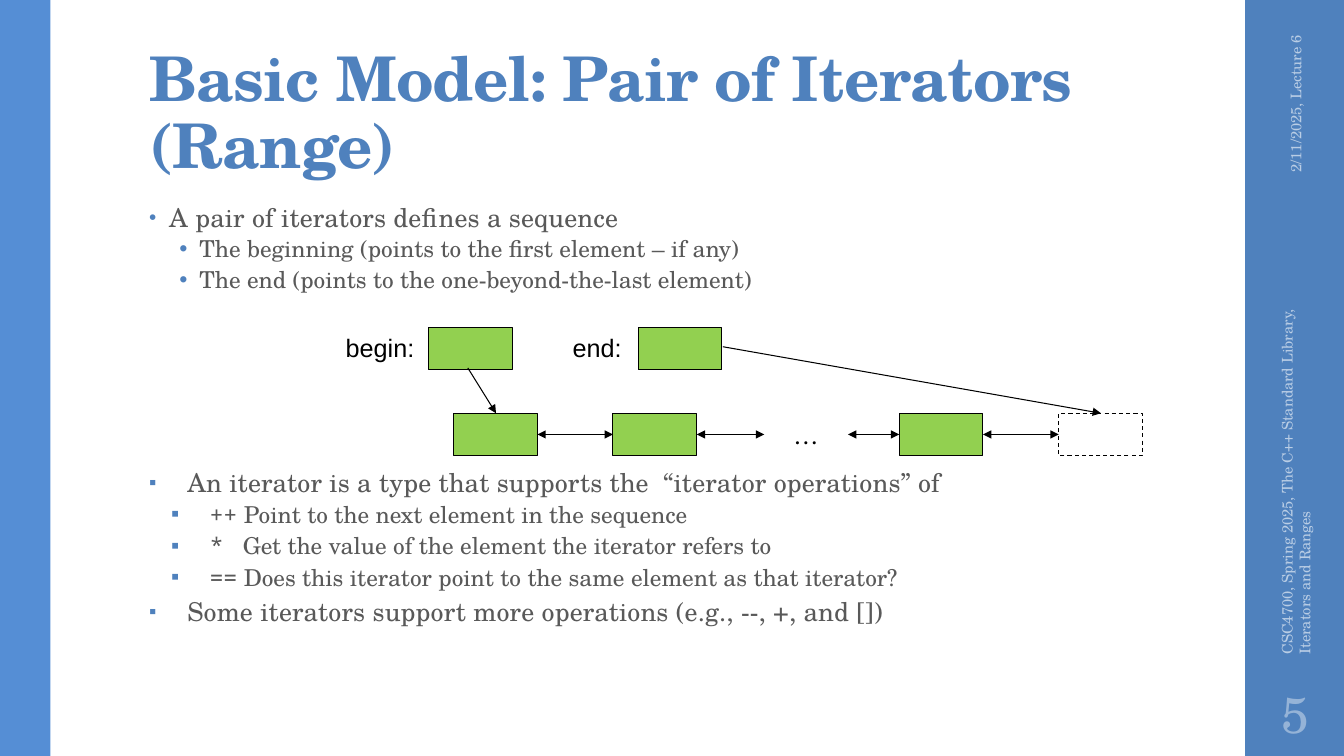
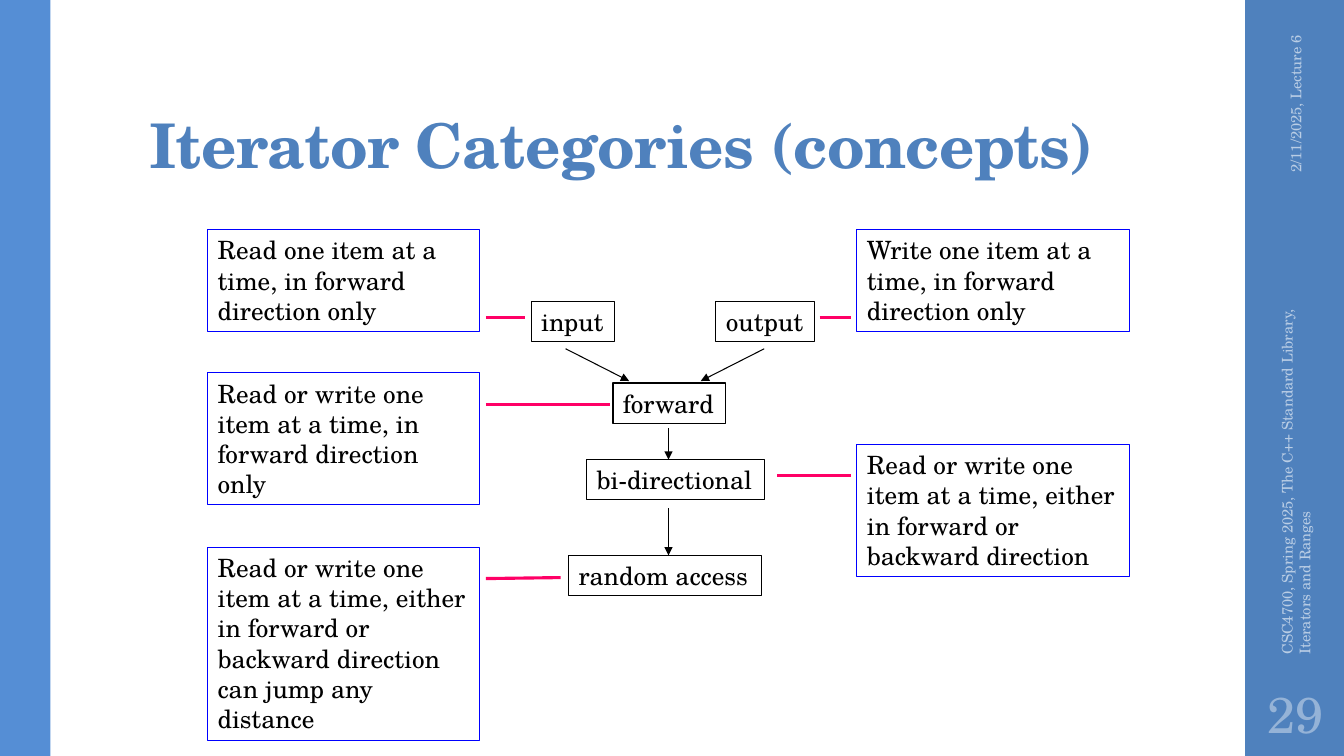
"""Two lecture slides on iterators: the basic model and the categories."""
import pptx
import pptx.util
import pptx.dml.color
import pptx.enum.dml
import pptx.enum.shapes
import pptx.enum.text
import pptx.oxml.ns
import lxml.etree

Inches = pptx.util.Inches
Pt = pptx.util.Pt
RGB = pptx.dml.color.RGBColor.from_string
ALIGN = pptx.enum.text.PP_ALIGN
ANCHOR = pptx.enum.text.MSO_ANCHOR
RECT = pptx.enum.shapes.MSO_SHAPE.RECTANGLE
qn = pptx.oxml.ns.qn

SERIF, MONO, SANS = "TeX Gyre Schola", "Noto Sans Mono", "Arial"
COLORS = {
    "accent": "4F81BD", "band": "558ED5", "body": "595959", "footer": "B9CDE5",
    "number": "95B3D7", "cell": "92D050", "black": "000000", "white": "FFFFFF",
    "note": "0000FF", "link": "FF0066",
}


def add_text(s, at, text, size=18, color="black", font=SERIF, align=ALIGN.LEFT,
             anchor=ANCHOR.TOP, wrap=True, border=None):
    """Add a one-paragraph text box, with a border if a colour is given."""
    sp = s.shapes.add_textbox(*[Inches(v) for v in at])
    tf = sp.text_frame
    tf.word_wrap = wrap
    tf.vertical_anchor = anchor
    p = tf.paragraphs[0]
    p.alignment = align
    r = p.add_run()
    r.text = text
    r.font.size = Pt(size)
    r.font.name = font
    r.font.color.rgb = RGB(COLORS[color])
    if border:
        sp.line.color.rgb = RGB(COLORS[border])
        sp.line.width = Pt(0.75)
    return sp


def add_line(s, ends, color="black", width=0.75, arrows=("tailEnd",)):
    """Add a straight connector with triangles at the named ends."""
    cx = s.shapes.add_connector(pptx.enum.shapes.MSO_CONNECTOR.STRAIGHT,
                                *[Inches(v) for v in ends])
    cx.line.color.rgb = RGB(COLORS[color])
    cx.line.width = Pt(width)
    ln = cx.line._get_or_add_ln()
    for tag in arrows:
        lxml.etree.SubElement(ln, qn("a:" + tag), type="triangle")
    lxml.etree.SubElement(cx._element.spPr, qn("a:effectLst"))


prs = pptx.Presentation()
prs.slide_width = Inches(13.33)
prs.slide_height = Inches(7.5)

slides = []
for title, number in [("Basic Model: Pair of Iterators (Range)", "5"),
                      ("Iterator Categories (concepts)", "29")]:
    s = prs.slides.add_slide(prs.slide_layouts[5])
    slides.append(s)
    for left, width, color in [(12.35, 1, "accent"), (0, 0.5, "band")]:
        sp = s.shapes.add_shape(RECT, Inches(left), 0, Inches(width), prs.slide_height)
        sp.shadow.inherit = False
        sp.fill.solid()
        sp.fill.fore_color.rgb = RGB(COLORS[color])
        sp.line.fill.background()

    sp = s.shapes.title
    sp.left, sp.top = Inches(1.38), Inches(0.32)
    sp.width, sp.height = Inches(10.6), Inches(1.53)
    tf = sp.text_frame
    tf.word_wrap = True
    tf.auto_size = pptx.enum.text.MSO_AUTO_SIZE.NONE
    tf.vertical_anchor = ANCHOR.BOTTOM
    tf.margin_top = Inches(0.03)
    p = tf.paragraphs[0]
    p.alignment = ALIGN.LEFT
    p.line_spacing = 0.9
    r = p.add_run()
    r.text = title
    r.font.size = Pt(44)
    r.font.bold = True
    r.font.name = SERIF
    r.font.color.rgb = RGB(COLORS["accent"])
    r._r.get_or_add_rPr().set("spc", "-50")

    for at, text, align in [
        ((11.81, 1.09, 2.08, 0.4), "2/11/2025, Lecture 6", ALIGN.RIGHT),
        ((10.89, 4.43, 3.92, 0.4),
         "CSC4700, Spring 2025, The C++ Standard Library, Iterators and Ranges", ALIGN.LEFT),
    ]:
        sp = add_text(s, at, text, 10.5, "footer", align=align, anchor=ANCHOR.MIDDLE)
        sp.rotation = 270
    sp = add_text(s, (12.35, 6.75, 1, 0.65), number, 36, "number",
                  align=ALIGN.CENTER, anchor=ANCHOR.MIDDLE)
    sp.text_frame.margin_left = sp.text_frame.margin_right = Inches(0.05)

model, categories = slides

LEVELS = [
    {"size": 18.5, "spacing": 0.85, "after": 2, "bullet": "80000", "spc": "10"},
    {"size": 16.6, "spacing": 0.8, "after": 3, "bullet": "100000", "spc": "0"},
]
LISTS = [
    {"top": 2, "height": 1.1, "bullet": "•", "margins": (0.2, 0.5), "hang": 0.2,
     "before": (14, 3), "items": [
         (0, "", "A pair of iterators defines a sequence"),
         (1, "", "The beginning (points to the first element – if any)"),
         (1, "", "The end (points to the one-beyond-the-last element)")]},
    {"top": 4.63, "height": 1.75, "bullet": "▪", "margins": (0.38, 0.6), "hang": 0.38,
     "before": (4, 3.4), "items": [
         (0, "", "An iterator is a type that supports the  “iterator operations” of"),
         (1, "++", " Point to the next element in the sequence"),
         (1, "*", " Get the value of the element the iterator refers to"),
         (1, "==", " Does this iterator point to the same element as that iterator?"),
         (0, "", "Some iterators support more operations (e.g., --, +, and [])")]},
]
for block in LISTS:
    sp = model.shapes.add_textbox(Inches(1.38), Inches(block["top"]),
                                  Inches(9.4), Inches(block["height"]))
    tf = sp.text_frame
    tf.word_wrap = True
    for i, (level, code, text) in enumerate(block["items"]):
        style = LEVELS[level]
        p = tf.add_paragraph() if i else tf.paragraphs[0]
        p.level = level
        p.line_spacing = style["spacing"]
        p.space_before = Pt(block["before"][level])
        p.space_after = Pt(style["after"])
        pPr = p._p.get_or_add_pPr()
        pPr.set("marL", str(Inches(block["margins"][level])))
        pPr.set("indent", str(-Inches(block["hang"])))
        clr = lxml.etree.SubElement(pPr, qn("a:buClr"))
        lxml.etree.SubElement(clr, qn("a:srgbClr"), val=COLORS["accent"])
        lxml.etree.SubElement(pPr, qn("a:buSzPct"), val=style["bullet"])
        lxml.etree.SubElement(pPr, qn("a:buFont"), typeface=SANS)
        lxml.etree.SubElement(pPr, qn("a:buChar"), char=block["bullet"])
        for words, font in [(code, MONO), (text, SERIF)]:
            if words:
                r = p.add_run()
                r.text = words
                r.font.size = Pt(style["size"])
                r.font.name = font
                r.font.color.rgb = RGB(COLORS["body"])
                spc = "930" if words == "*" else style["spc"]
                r._r.get_or_add_rPr().set("spc", spc)

CELL_W, CELL_H = 0.83, 0.42
HANDLE_Y, ROW_Y = 3.25, 4.1
for left, top, color in [
    (4.25, HANDLE_Y, "cell"), (6.33, HANDLE_Y, "cell"), (4.5, ROW_Y, "cell"),
    (6.08, ROW_Y, "cell"), (8.92, ROW_Y, "cell"), (10.5, ROW_Y, "white"),
]:
    sp = model.shapes.add_shape(RECT, Inches(left), Inches(top),
                                Inches(CELL_W), Inches(CELL_H))
    sp.shadow.inherit = False
    sp.fill.solid()
    sp.fill.fore_color.rgb = RGB(COLORS[color])
    sp.line.color.rgb = RGB(COLORS["black"])
    sp.line.width = Pt(0.75)
    if color == "white":
        sp.line.dash_style = pptx.enum.dml.MSO_LINE.DASH
add_text(model, (7.58, ROW_Y, CELL_W, CELL_H), "…", align=ALIGN.CENTER,
         anchor=ANCHOR.MIDDLE, wrap=False)

row = [4.5, 6.08, 7.58, 8.92, 10.5]
mid = ROW_Y + CELL_H / 2
for left, right in zip(row, row[1:]):
    add_line(model, (left + CELL_W, mid, right, mid), arrows=("headEnd", "tailEnd"))
add_line(model, (4.64, 3.65, 4.92, ROW_Y))
add_line(model, (7.17, 3.44, 10.92, ROW_Y))
for left, text in [(3.33, "begin:"), (5.58, "end:")]:
    add_text(model, (left, HANDLE_Y, 1.08, 0.4), text, font=SANS)

for left, top, width, text in [
    (5.27, 2.99, 0.83, "input"), (7.1, 2.99, 0.98, "output"),
    (6.08, 3.8, 1.12, "forward"), (5.82, 4.56, 1.76, "bi-directional"),
    (5.64, 5.51, 1.91, "random access"),
]:
    add_text(categories, (left, top, width, 0.4), text, wrap=False, border="black")
for ends in [(5.61, 3.46, 6.24, 3.78), (7.58, 3.46, 6.95, 3.78),
             (6.63, 4.25, 6.63, 4.56), (6.63, 5.04, 6.63, 5.51)]:
    add_line(categories, ends)

for left, top, height, text in [
    (2.06, 2.28, 1.01, "Read one item at a time, in forward direction only"),
    (8.5, 2.28, 1.01, "Write one item at a time, in forward direction only"),
    (2.06, 3.7, 1.31, "Read or write one item at a time, in forward direction only"),
    (8.5, 4.41, 1.31,
     "Read or write one item at a time, either in forward or backward direction"),
    (2.06, 5.43, 1.92, "Read or write one item at a time, either in forward or "
                       "backward direction can jump any distance"),
]:
    add_text(categories, (left, top, 2.7, height), text, border="note")
for ends in [(4.82, 3.15, 5.21, 3.15), (4.82, 5.74, 5.56, 5.73), (4.82, 4.01, 6.05, 4.01),
             (8.13, 3.15, 8.44, 3.15), (7.71, 4.72, 8.44, 4.72)]:
    add_line(categories, ends, "link", 2.25, ())

prs.save("out.pptx")
